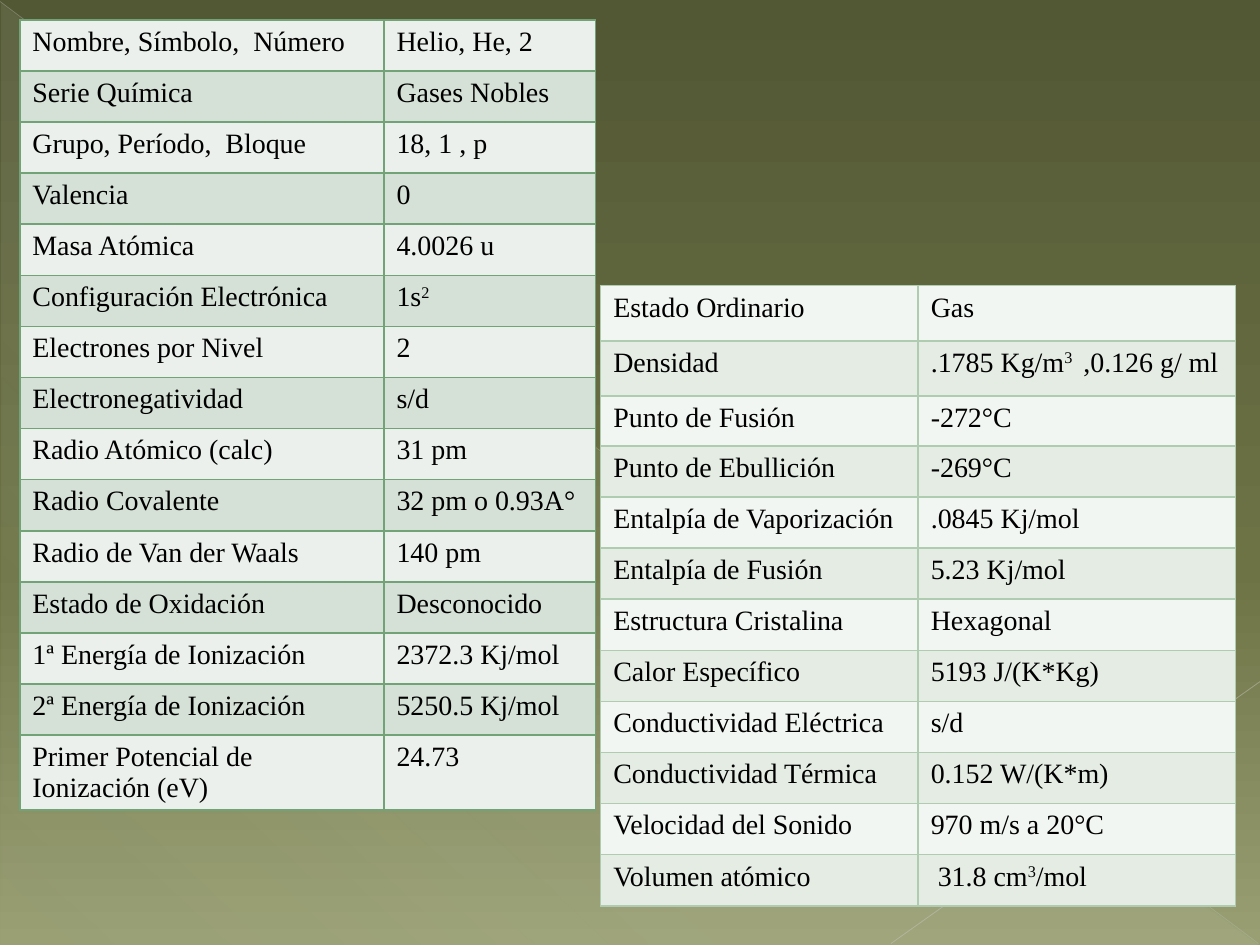
"""Build a slide with two tables of the properties of helium."""
from lxml.etree import SubElement
from pptx import Presentation
from pptx.dml.color import RGBColor
from pptx.enum.shapes import MSO_CONNECTOR, MSO_SHAPE
from pptx.oxml import parse_xml
from pptx.oxml.ns import nsdecls, qn
from pptx.util import Cm, Pt

BASIC_ROWS = [
    ("Nombre, Símbolo,  Número", "Helio, He, 2"),
    ("Serie Química", "Gases Nobles"),
    ("Grupo, Período,  Bloque", "18, 1 , p"),
    ("Valencia", "0"),
    ("Masa Atómica", "4.0026 u"),
    ("Configuración Electrónica", "1s^2"),
    ("Electrones por Nivel", "2"),
    ("Electronegatividad", "s/d"),
    ("Radio Atómico (calc)", "31 pm"),
    ("Radio Covalente", "32 pm o 0.93A°"),
    ("Radio de Van der Waals", "140 pm"),
    ("Estado de Oxidación", "Desconocido"),
    ("1ª Energía de Ionización", "2372.3 Kj/mol"),
    ("2ª Energía de Ionización", "5250.5 Kj/mol"),
    ("Primer Potencial de Ionización (eV)", "24.73"),
]
PHYSICAL_ROWS = [
    ("Estado Ordinario", "Gas"),
    ("Densidad", ".1785 Kg/m^3 ^ ,0.126 g/ ml"),
    ("Punto de Fusión", "-272°C"),
    ("Punto de Ebullición", "-269°C"),
    ("Entalpía de Vaporización", ".0845 Kj/mol"),
    ("Entalpía de Fusión", "5.23 Kj/mol"),
    ("Estructura Cristalina", "Hexagonal"),
    ("Calor Específico", "5193 J/(K*Kg)"),
    ("Conductividad Eléctrica", "s/d"),
    ("Conductividad Térmica", "0.152 W/(K*m)"),
    ("Velocidad del Sonido", "970 m/s a 20°C"),
    ("Volumen atómico", " 31.8 cm^3^/mol"),
]


def color(value):
    return RGBColor.from_string(value)


def write(frame, text, font="Times New Roman", size=16, ink="000000"):
    para = frame.paragraphs[0]
    for index, part in enumerate(text.split("^")):
        span = para.add_run()
        span.text = part
        span.font.name = font
        span.font.size = Pt(size)
        span.font.color.rgb = color(ink)
        if index % 2:
            span.font._element.set("baseline", "30000")


def set_alpha(color_element, percent):
    SubElement(color_element, qn("a:alpha"), val=str(percent * 1000))


class SlideBuilder:
    def __init__(self, deck, border_width=1, row_height=1.03):
        self.page = deck.slides.add_slide(deck.slide_layouts[6])
        self.border_width = border_width
        self.row_height = row_height

    def gradient(self, fill, element, stops, angle):
        fill.gradient()
        gradient = element.xpath(".//a:gradFill")[0]
        gradient.clear()
        stop_list = SubElement(gradient, qn("a:gsLst"))
        for position, value, alpha in stops:
            stop = SubElement(stop_list, qn("a:gs"), pos=str(position * 1000))
            set_alpha(SubElement(stop, qn("a:srgbClr"), val=value), alpha)
        SubElement(gradient, qn("a:lin"), ang=str(angle * 60000), scaled="0")

    def background(self, stops, angle):
        self.gradient(self.page.background.fill, self.page.element, stops, angle)

    def triangle(self, left, top, width, height, stops, angle):
        box = self.page.shapes.add_shape(
            MSO_SHAPE.RIGHT_TRIANGLE, Cm(left), Cm(top), Cm(width), Cm(height))
        box.shadow.inherit = False
        box.line.fill.background()
        self.gradient(box.fill, box._element.spPr, stops, angle)

    def line(self, start, end, ink, width, alpha):
        line = self.page.shapes.add_connector(
            MSO_CONNECTOR.STRAIGHT, *(Cm(value) for value in start + end))
        line.line.width = Pt(width)
        line.line.color.rgb = color(ink)
        properties = line._element.spPr
        set_alpha(properties.xpath("./a:ln//a:srgbClr")[0], alpha)
        SubElement(properties, qn("a:effectLst"))

    def borders(self, cell, ink):
        properties = cell._tc.get_or_add_tcPr()
        for index, side in enumerate("LRTB"):
            properties.insert(index, parse_xml(
                f'<a:ln{side} {nsdecls("a")} w="{Pt(self.border_width)}">'
                f'<a:solidFill><a:srgbClr val="{ink}"/></a:solidFill></a:ln{side}>'))

    def table(self, left, top, widths, rows, bands, border, tall_rows=()):
        heights = [*tall_rows, *[self.row_height] * (len(rows) - len(tall_rows))]
        table = self.page.shapes.add_table(
            len(rows), len(widths), Cm(left), Cm(top),
            Cm(sum(widths)), Cm(sum(heights))).table
        table.first_row = table.horz_banding = False
        for column, width in zip(table.columns, widths):
            column.width = Cm(width)
        for index, (row, height, texts) in enumerate(zip(table.rows, heights, rows)):
            row.height = Cm(height)
            for cell, text in zip(row.cells, texts):
                write(cell.text_frame, text)
                cell.fill.solid()
                cell.fill.fore_color.rgb = color(bands[index % 2])
                self.borders(cell, border)


def main():
    deck = Presentation()
    deck.slide_width, deck.slide_height = Cm(25.4), Cm(19.05)
    builder = SlideBuilder(deck)
    builder.background(
        [(0, "525734", 100), (60, "6D7345", 100), (100, "999F73", 100)], 90)
    builder.triangle(
        0.03, 0.05, 25.35, 19,
        [(0, "EAEBDE", 10), (70, "EAEBDE", 8), (100, "EAEBDE", 1)], 133)
    builder.line((0, 0.03), (25.37, 19.02), "C1C3B9", 0.39, 35)
    builder.line((25.4, 13.74), (17.96, 19.02), "C8C9C1", 0.47, 45)
    builder.table(0.4, 0.4, (7.34, 4.27), BASIC_ROWS, ("EBF0EC", "D5E0D6"), "72A376")
    builder.table(12.11, 5.76, (6.4, 6.4), PHYSICAL_ROWS, ("F2F6F2", "E4ECE4"),
                  "B0CCB0", tall_rows=(1.11, 1.11, 1.01))
    deck.save("out.pptx")


if __name__ == "__main__":
    main()
